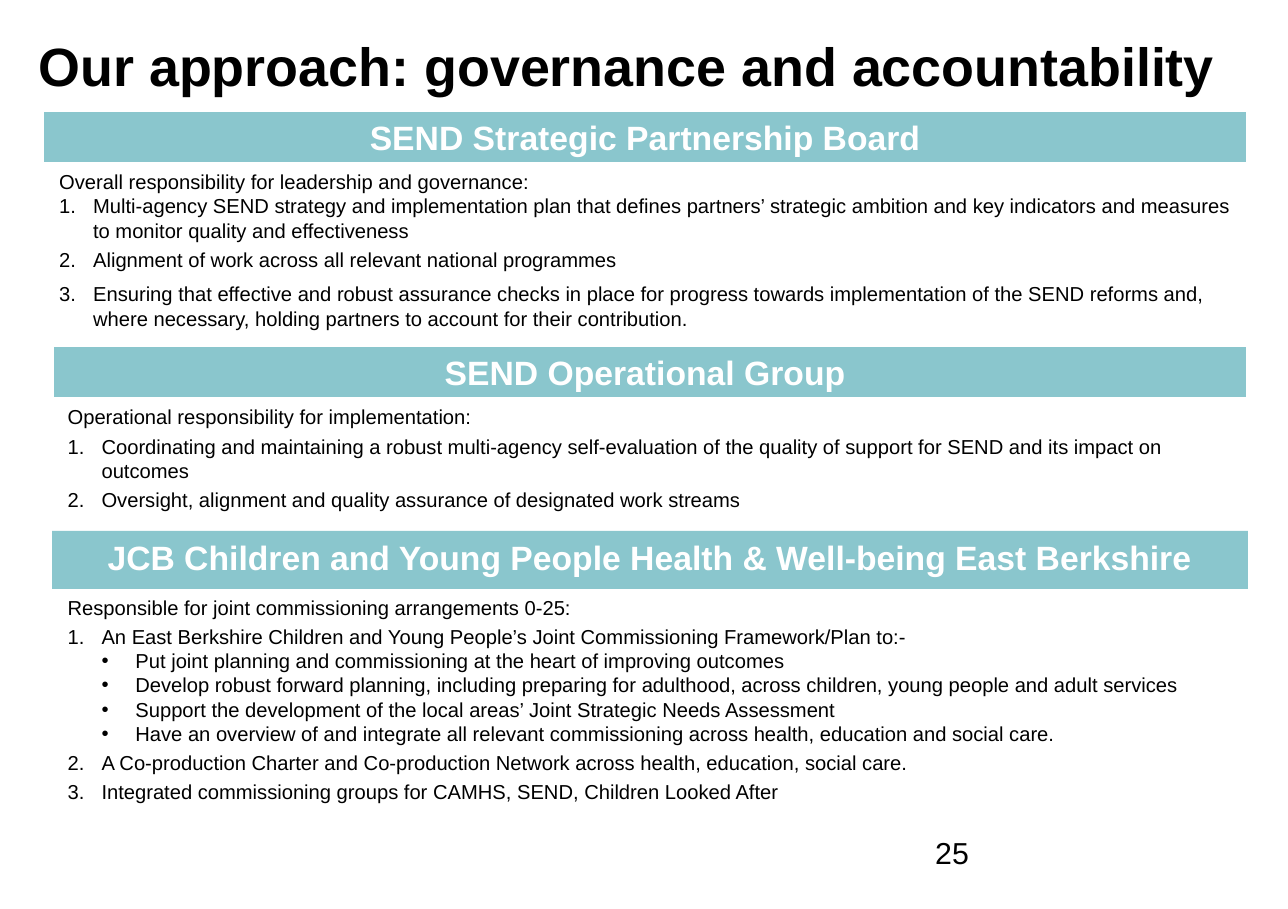
from lxml import etree
from pptx import Presentation
from pptx import util as u
from pptx.dml.color import RGBColor
from pptx.enum import shapes, text
from pptx.oxml.ns import qn

BLACK, WHITE, TEAL = "000000", "FFFFFF", "8AC6CD"
INDENT = 0.28

# Each list entry: style, space before in points, wording
BOARD = [
    ("plain", 0, "Overall responsibility for leadership and governance:"),
    ("number", 0, "Multi-agency SEND strategy and implementation plan that defines partners’ strategic "
                  "ambition and key indicators and measures to monitor quality and effectiveness"),
    ("number", 3, "Alignment of work across all relevant national programmes"),
    ("number", 6, "Ensuring that effective and robust assurance checks in place for progress towards "
                  "implementation of the SEND reforms and, where necessary, holding partners to account "
                  "for their contribution."),
]
OPERATIONAL_GROUP = [
    ("plain", 0, "Operational responsibility for implementation:"),
    ("number", 3, "Coordinating and maintaining a robust multi-agency self-evaluation of the quality of "
                  "support for SEND and its impact on outcomes"),
    ("number", 3, "Oversight, alignment and quality assurance of designated work streams"),
]
COMMISSIONING = [
    ("plain", 0, "Responsible for joint commissioning arrangements 0-25:"),
    ("number", 3, "An East Berkshire Children and Young People’s Joint Commissioning Framework/Plan to:-"),
    ("bullet", 0, "Put joint planning and commissioning at the heart of improving outcomes"),
    ("bullet", 0, "Develop robust forward planning, including preparing for adulthood, across children, "
                  "young people and adult services"),
    ("bullet", 0, "Support the development of the local areas’ Joint Strategic Needs Assessment"),
    ("bullet", 0, "Have an overview of and integrate all relevant commissioning across health, education "
                  "and social care."),
    ("number", 3, "A Co-production Charter and Co-production Network across health, education, social care."),
    ("number", 3, "Integrated commissioning groups for CAMHS, SEND, Children Looked After"),
]


def color(value):
    return RGBColor.from_string(value)


def write(paragraph, wording, size=12, fill=BLACK, bold=False, align=text.PP_ALIGN.LEFT,
          before=0, line_spacing=None):
    paragraph.alignment = align
    paragraph.space_before = u.Pt(before)
    if line_spacing:
        paragraph.line_spacing = line_spacing
    run = paragraph.add_run()
    run.text = wording
    run.font.name = "Arial"
    run.font.size = u.Pt(size)
    run.font.bold = bold
    run.font.color.rgb = color(fill)


def set_indent(paragraph, left, first=0):
    properties = paragraph._p.get_or_add_pPr()
    properties.set("marL", str(u.Inches(left)))
    properties.set("indent", str(u.Inches(first)))
    return properties


def set_marker(paragraph, style):
    """Hang the paragraph from a number or, one level deeper, a bullet."""
    if style == "number":
        properties = set_indent(paragraph, INDENT, -INDENT)
        etree.SubElement(properties, qn("a:buFont"), typeface="+mj-lt")
        etree.SubElement(properties, qn("a:buAutoNum"), type="arabicPeriod")
    elif style == "bullet":
        paragraph.level = 1
        properties = set_indent(paragraph, 2 * INDENT, -INDENT)
        etree.SubElement(properties, qn("a:buFont"), typeface="Arial")
        etree.SubElement(properties, qn("a:buChar"), char="•")


def add_text_box(slide, left, top, width, height):
    box = slide.shapes.add_textbox(*map(u.Inches, (left, top, width, height)))
    box.text_frame.word_wrap = True
    return box.text_frame


def add_banner(slide, wording, left, top, width, height, right_inset=0.01,
               outline=True, line_spacing=None):
    banner = slide.shapes.add_shape(shapes.MSO_SHAPE.RECTANGLE,
                                    *map(u.Inches, (left, top, width, height)))
    banner.shadow.inherit = False
    banner.fill.solid()
    banner.fill.fore_color.rgb = color(TEAL)
    if outline:
        banner.line.color.rgb = color(WHITE)
        banner.line.width = u.Pt(2)
    else:
        banner.line.fill.background()
    frame = banner.text_frame
    frame.word_wrap = True
    frame.vertical_anchor = text.MSO_ANCHOR.MIDDLE
    frame.margin_left = frame.margin_top = frame.margin_bottom = u.Inches(0.01)
    frame.margin_right = u.Inches(right_inset)
    write(frame.paragraphs[0], wording, size=20, fill=WHITE, bold=True,
          align=text.PP_ALIGN.CENTER, line_spacing=line_spacing)


def add_duties(slide, duties, left, top, width, height):
    frame = add_text_box(slide, left, top, width, height)
    frame.auto_size = text.MSO_AUTO_SIZE.SHAPE_TO_FIT_TEXT
    for index, (style, before, wording) in enumerate(duties):
        paragraph = frame.add_paragraph() if index else frame.paragraphs[0]
        set_marker(paragraph, style)
        write(paragraph, wording, before=before)


def add_title(slide, wording):
    frame = add_text_box(slide, -0.17, 0.17, 10.63, 0.74)
    frame.vertical_anchor = text.MSO_ANCHOR.MIDDLE
    set_indent(frame.paragraphs[0], 0.39)
    write(frame.paragraphs[0], wording, size=32, bold=True)


def main():
    presentation = Presentation()
    presentation.slide_width = u.Inches(10.63)
    presentation.slide_height = u.Inches(7.5)
    slide = presentation.slides.add_slide(presentation.slide_layouts[6])

    add_title(slide, "Our approach: governance and accountability")
    add_banner(slide, "SEND Strategic Partnership Board", 0.35, 0.91, 9.95, 0.44)
    add_duties(slide, BOARD, 0.39, 1.35, 9.88, 1.44)
    add_banner(slide, "SEND Operational Group", 0.43, 2.85, 9.87, 0.44, right_inset=0.09)
    add_duties(slide, OPERATIONAL_GROUP, 0.46, 3.29, 9.81, 0.99)
    add_banner(slide, "JCB Children and Young People Health & Well-being East Berkshire",
               0.43, 4.38, 9.87, 0.48, outline=False, line_spacing=0.9)
    add_duties(slide, COMMISSIONING, 0.46, 4.86, 9.84, 1.84)

    page_number = add_text_box(slide, 7.62, 6.83, 2.48, 0.52)
    write(page_number.paragraphs[0], "25", size=18)

    presentation.save("out.pptx")


if __name__ == "__main__":
    main()
